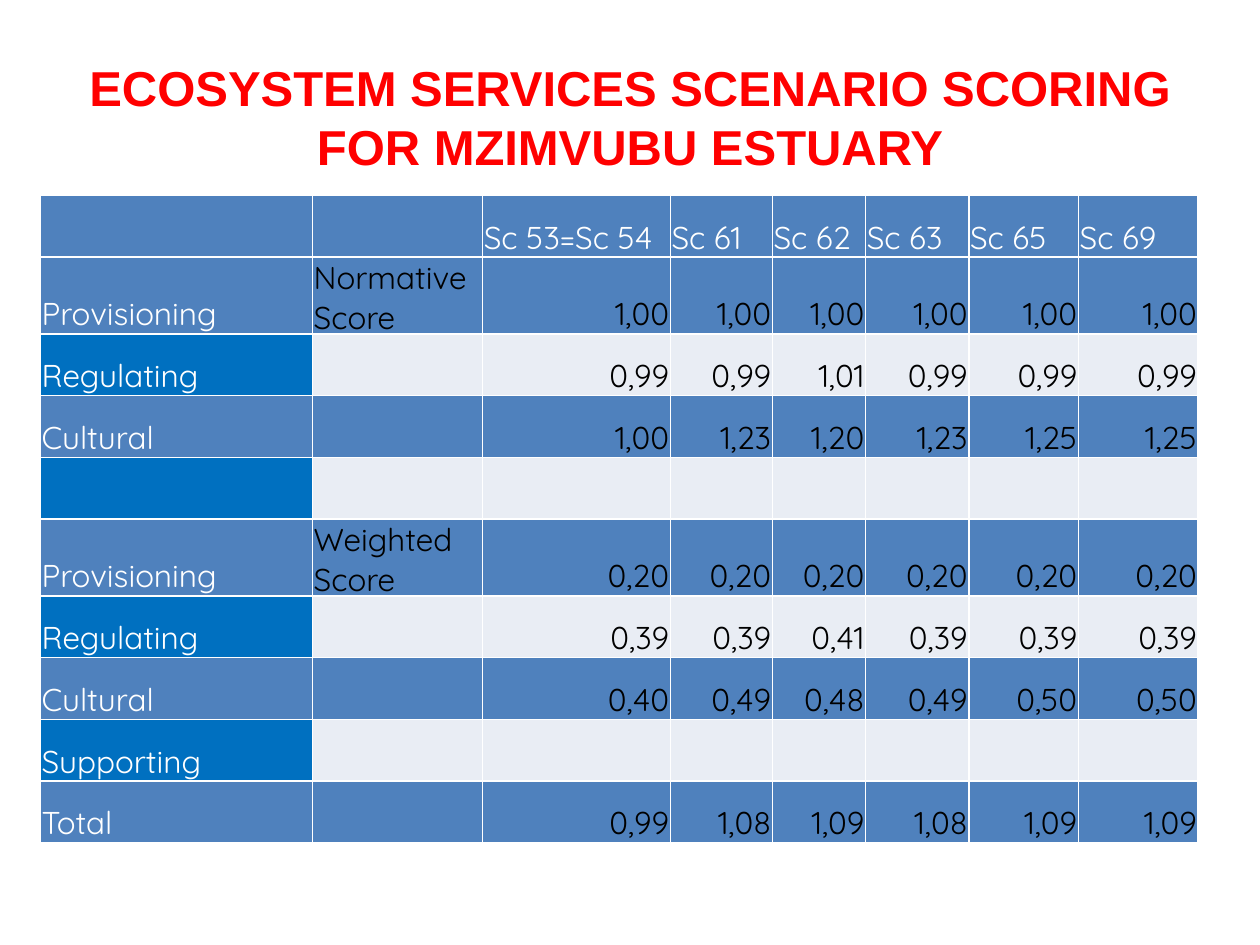
from lxml import etree
from pptx import Presentation, util as u
from pptx.dml.color import RGBColor
from pptx.enum import text as t
from pptx.oxml import ns

RED = RGBColor(0xFF, 0x00, 0x00)
WHITE = RGBColor(0xFF, 0xFF, 0xFF)
BLACK = RGBColor(0x00, 0x00, 0x00)
STEEL = RGBColor(0x4F, 0x81, 0xBD)
BLUE = RGBColor(0x00, 0x70, 0xC0)
PALE = RGBColor(0xE9, 0xED, 0xF4)

COLUMN_WIDTHS = [2.16, 1.35, 1.49, 0.81, 0.74, 0.82, 0.87, 0.95]
ROW_HEIGHT = 0.49
SCORES = [
    ["", "", "Sc 53=Sc 54", "Sc 61", "Sc 62", "Sc 63", "Sc 65", "Sc 69"],
    ["Provisioning", "Normative Score"] + ["1,00"] * 6,
    ["Regulating", "", "0,99", "0,99", "1,01", "0,99", "0,99", "0,99"],
    ["Cultural", "", "1,00", "1,23", "1,20", "1,23", "1,25", "1,25"],
    [""] * 8,
    ["Provisioning", "Weighted Score"] + ["0,20"] * 6,
    ["Regulating", "", "0,39", "0,39", "0,41", "0,39", "0,39", "0,39"],
    ["Cultural", "", "0,40", "0,49", "0,48", "0,49", "0,50", "0,50"],
    ["Supporting"] + [""] * 7,
    ["Total", "", "0,99", "1,08", "1,09", "1,08", "1,09", "1,09"],
]


def write(frame, text, *, font, size, color, bold=False, align=t.PP_ALIGN.LEFT):
    para = frame.paragraphs[0]
    para.alignment = align
    span = para.add_run()
    span.text = text
    span.font.name = font
    span.font.size = u.Pt(size)
    span.font.bold = bold
    span.font.color.rgb = color


class ScoreSlide:
    title_font = "Arial"
    table_font = "Quicksand"

    def __init__(self, page):
        self.page = page

    def title(self, text, left, top, width, height):
        box = self.page.shapes.add_textbox(*map(u.Inches, (left, top, width, height)))
        frame = box.text_frame
        frame.word_wrap = True
        frame.vertical_anchor = t.MSO_ANCHOR.MIDDLE
        write(frame, text, font=self.title_font, size=28, color=RED, bold=True,
              align=t.PP_ALIGN.CENTER)

    def table(self, rows, widths, row_height, left, top):
        size = (sum(widths), row_height * len(rows))
        table = self.page.shapes.add_table(
            len(rows), len(widths), *map(u.Inches, (left, top, *size))).table
        for column, width in zip(table.columns, widths):
            column.width = u.Inches(width)
        for row, values in enumerate(rows):
            table.rows[row].height = u.Inches(row_height)
            for column, text in enumerate(values):
                self.cell(table.cell(row, column), text, row, column)

    def cell(self, cell, text, row, column):
        banded = row > 0 and row % 2 == 0
        fill = (BLUE if column == 0 else PALE) if banded else STEEL
        cell.fill.solid()
        cell.fill.fore_color.rgb = fill
        self.borders(cell)
        cell.vertical_anchor = t.MSO_ANCHOR.BOTTOM
        cell.margin_left = cell.margin_right = cell.margin_top = u.Inches(0.01)
        cell.margin_bottom = 0
        if text:
            label = row == 0 or column == 0
            number = row > 0 and column > 1
            write(cell.text_frame, text, font=self.table_font, size=18,
                  color=WHITE if label else BLACK,
                  align=t.PP_ALIGN.RIGHT if number else t.PP_ALIGN.LEFT)

    def borders(self, cell):
        properties = cell._tc.get_or_add_tcPr()
        for index, side in enumerate(("lnL", "lnR", "lnT", "lnB")):
            line = etree.Element(ns.qn(f"a:{side}"), w=str(u.Pt(1)))
            solid = etree.SubElement(line, ns.qn("a:solidFill"))
            etree.SubElement(solid, ns.qn("a:srgbClr"), val=str(WHITE))
            properties.insert(index, line)


def main():
    deck = Presentation()
    deck.slide_width = u.Inches(10)
    deck.slide_height = u.Inches(7.5)
    slide = ScoreSlide(deck.slides.add_slide(deck.slide_layouts[6]))
    slide.title("ECOSYSTEM SERVICES SCENARIO SCORING FOR MZIMVUBU ESTUARY",
                0.5, 0.3, 9, 1.25)
    slide.table(SCORES, COLUMN_WIDTHS, ROW_HEIGHT, 0.32, 1.55)
    deck.save("out.pptx")


if __name__ == "__main__":
    main()
